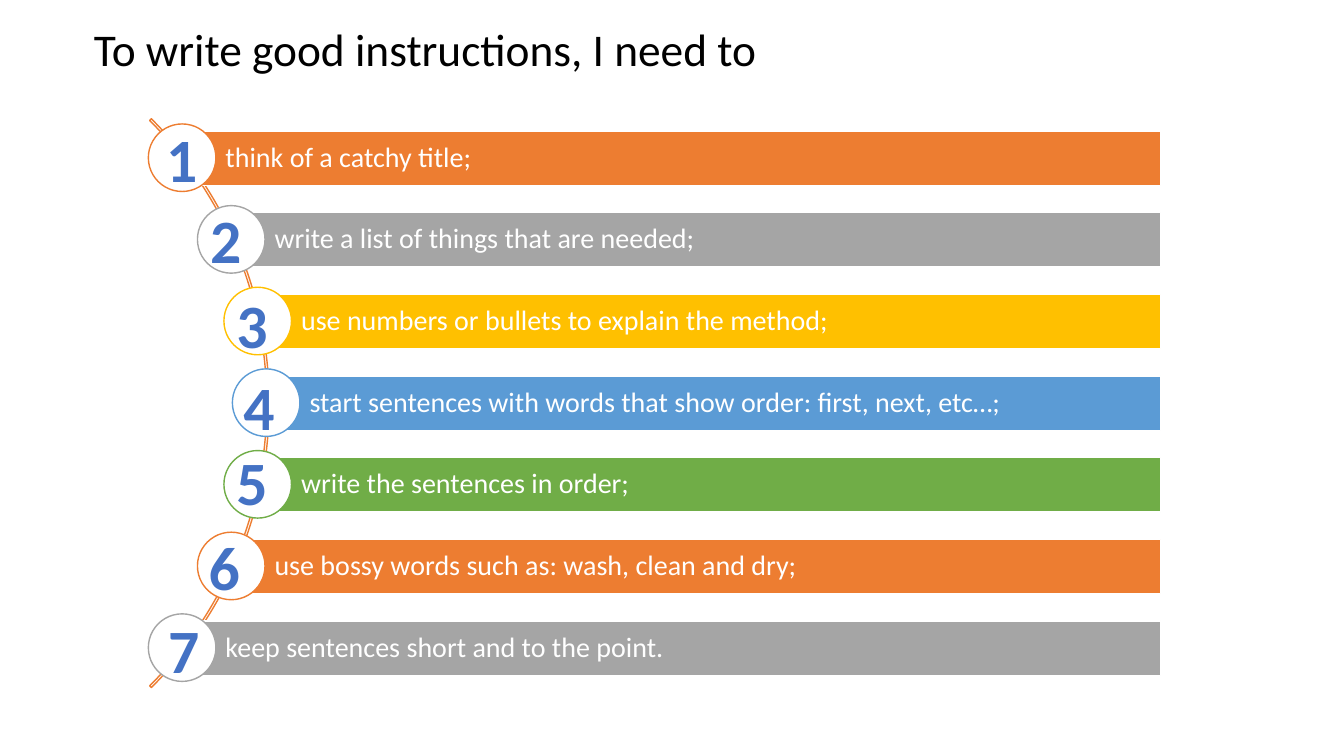
"""Build a slide listing seven steps for writing good instructions along an arc."""
import math

import pptx
import pptx.util
from pptx.dml.color import RGBColor
from pptx.enum.shapes import MSO_SHAPE
from pptx.enum.text import MSO_ANCHOR, PP_ALIGN
from pptx.util import Inches

BLACK = RGBColor(0x00, 0x00, 0x00)
WHITE = RGBColor(0xFF, 0xFF, 0xFF)
ORANGE = RGBColor(0xED, 0x7D, 0x31)
GREY = RGBColor(0xA5, 0xA5, 0xA5)
GOLD = RGBColor(0xFF, 0xC0, 0x00)
BLUE = RGBColor(0x5B, 0x9B, 0xD5)
GREEN = RGBColor(0x70, 0xAD, 0x47)
NUMBER_BLUE = RGBColor(0x44, 0x72, 0xC4)


def write(sp, text, size, color, bold=False, align=PP_ALIGN.LEFT,
          anchor=MSO_ANCHOR.MIDDLE, spacing=0.9, wrap=True):
    tf = sp.text_frame
    tf.word_wrap = wrap
    tf.vertical_anchor = anchor
    p = tf.paragraphs[0]
    p.alignment = align
    p.line_spacing = spacing
    r = p.add_run()
    r.text = text
    r.font.name = "Calibri"
    r.font.size = pptx.util.Pt(size)
    r.font.bold = bold
    r.font.color.rgb = color
    return tf


def add_shape(kind, left, top, width, height, fill, line):
    sp = s.shapes.add_shape(kind, Inches(left), Inches(top), Inches(width), Inches(height))
    sp.shadow.inherit = False
    if fill is None:
        sp.fill.background()
    else:
        sp.fill.solid()
        sp.fill.fore_color.rgb = fill
    sp.line.color.rgb = line
    sp.line.width = pptx.util.Pt(1)
    return sp


prs = pptx.Presentation()
prs.slide_width = Inches(13.33)
prs.slide_height = Inches(7.5)
s = prs.slides.add_slide(prs.slide_layouts[5])

title = s.shapes.title
title.left, title.top = Inches(0.83), Inches(0.33)
title.width, title.height = Inches(10.43), Inches(0.37)
write(title, "To write good instructions, I need to", size=32.4, color=BLACK)

arc = add_shape(MSO_SHAPE.BLOCK_ARC, -5.31, 0.01, 7.98, 7.98, None, ORANGE)
for i, value in enumerate((189, 27, 0.003)):
    arc.adjustments[i] = value

STEPS = [
    ("think of a catchy title;", ORANGE),
    ("write a list of things that are needed;", GREY),
    ("use numbers or bullets to explain the method;", GOLD),
    ("start sentences with words that show order: first, next, etc…;", BLUE),
    ("write the sentences in order;", GREEN),
    ("use bossy words such as: wash, clean and dry;", ORANGE),
    ("keep sentences short and to the point.", GREY),
]
PITCH = 0.81
BAR_RIGHT = 11.51
ARC_CENTER = -1.32
ARC_RADIUS = 3.96
CIRCLE = 0.67

for i, (text, color) in enumerate(STEPS):
    left = ARC_CENTER + math.sqrt(ARC_RADIUS ** 2 - (PITCH * (i - 3)) ** 2)
    top = 1.3 + PITCH * i
    bar = add_shape(MSO_SHAPE.RECTANGLE, left, top, BAR_RIGHT - left, 0.54, color, WHITE)
    tf = write(bar, text, size=20, color=WHITE)
    tf.margin_left = Inches(0.43)
    tf.margin_right = tf.margin_top = tf.margin_bottom = Inches(0.06)
    add_shape(MSO_SHAPE.OVAL, left - CIRCLE / 2, top - 0.07, CIRCLE, CIRCLE, WHITE, color)

NUMBER_BOXES = [
    (1.55, 1.15, 0.39), (1.98, 1.95, 0.52), (2.23, 2.8, 0.54), (2.29, 3.61, 0.56),
    (2.24, 4.36, 0.52), (1.97, 5.2, 0.51), (1.57, 6.02, 0.48),
]
for number, (left, top, width) in enumerate(NUMBER_BOXES, start=1):
    box = s.shapes.add_textbox(Inches(left), Inches(top), Inches(width), Inches(0.84))
    write(box, str(number), size=44, color=NUMBER_BLUE, bold=True, align=PP_ALIGN.CENTER,
          anchor=MSO_ANCHOR.TOP, spacing=1.0, wrap=False)

prs.save("out.pptx")
